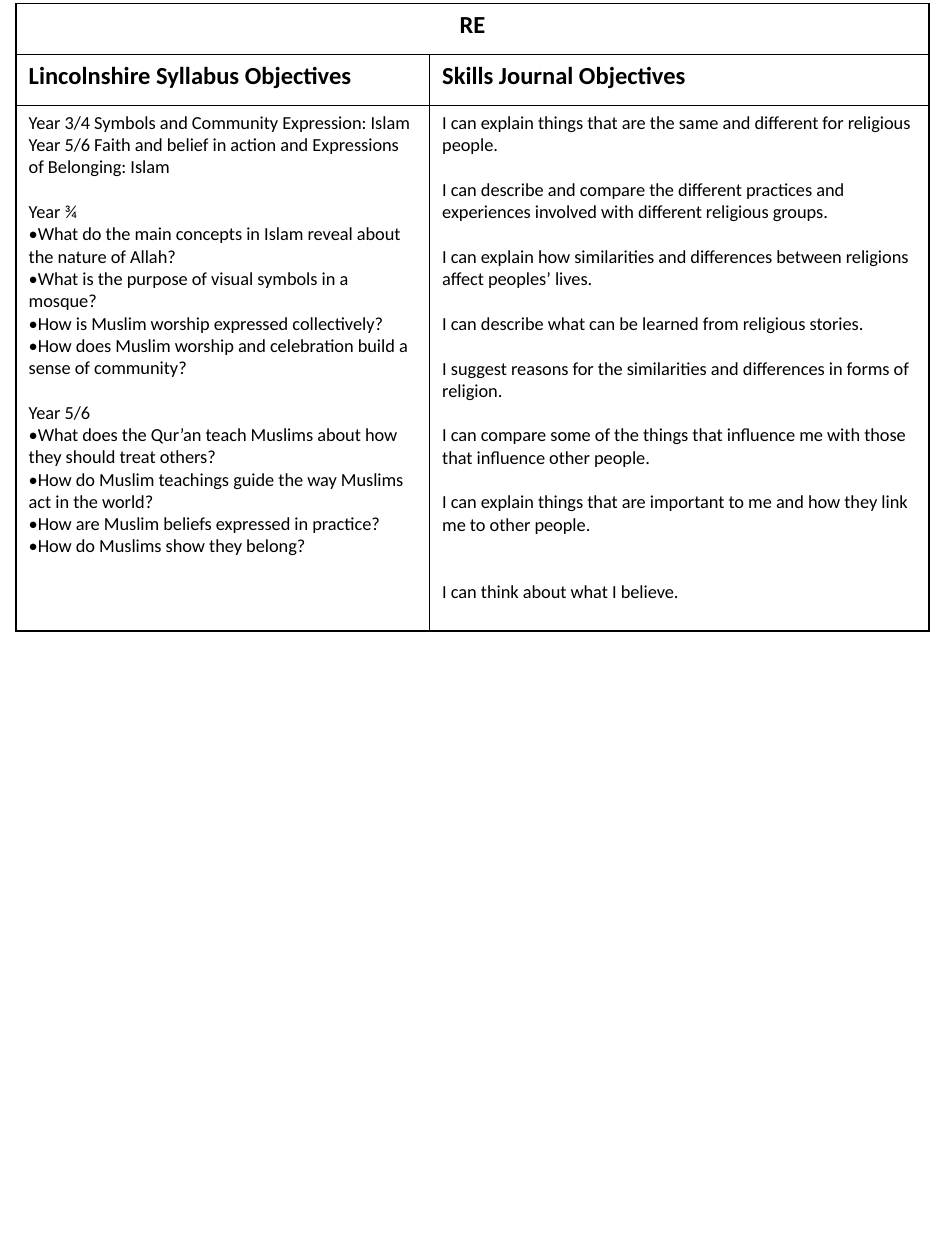
from lxml import etree
from pptx import Presentation
from pptx.dml.color import RGBColor
from pptx.enum.text import PP_ALIGN
from pptx.oxml.ns import qn
from pptx.util import Pt

CENTER = PP_ALIGN.CENTER
LEFT = PP_ALIGN.LEFT
BLACK = RGBColor(0, 0, 0)
FONT = "Calibri"
GAP = 12.8

themes = [
    (0, "Year 3/4 Symbols and Community Expression: Islam"),
    (0, "Year 5/6 Faith and belief in action and Expressions of Belonging: Islam"),
    (1, "Year ¾"),
    (0, "•What do the main concepts in Islam reveal about the nature of Allah? "),
    (0, "•What is the purpose of visual symbols in a mosque?"),
    (0, "•How is Muslim worship expressed collectively?"),
    (0, "•How does Muslim worship and celebration build a sense of community? "),
    (1, "Year 5/6 "),
    (0, "•What does the Qur’an teach Muslims about how they should treat others?"),
    (0, "•How do Muslim teachings guide the way Muslims act in the world? "),
    (0, "•How are Muslim beliefs expressed in practice?"),
    (0, "•How do Muslims show they belong? "),
]
skills = [
    (0, "I can explain things that are the same and different for religious people."),
    (1, "I can describe and compare the different practices and experiences involved with different religious groups."),
    (1, "I can explain how similarities and differences between religions affect peoples’ lives."),
    (1, "I can describe what can be learned from religious stories."),
    (1, "I suggest reasons for the similarities and differences in forms of religion."),
    (1, "I can compare some of the things that influence me with those that influence other people."),
    (1, "I can explain things that are important to me and how they link me to other people."),
    (2, "I can think about what I believe."),
]


def write(cell, lines, size, bold, align=LEFT):
    frame = cell.text_frame
    for i, (gap, text) in enumerate(lines):
        para = frame.paragraphs[0] if i == 0 else frame.add_paragraph()
        para.text = text
        para.alignment = align
        para.space_before = Pt(gap * GAP)
        para.font.name = FONT
        para.font.size = Pt(size)
        para.font.bold = bold
        para.font.color.rgb = BLACK


def border(cell):
    props = cell._tc.get_or_add_tcPr()
    for i, side in enumerate(("lnL", "lnR", "lnT", "lnB")):
        line = etree.Element(qn("a:" + side), w=str(Pt(1)))
        fill = etree.SubElement(line, qn("a:solidFill"))
        etree.SubElement(fill, qn("a:srgbClr"), val=str(BLACK))
        props.insert(i, line)


deck = Presentation()
deck.slide_width = Pt(540)
deck.slide_height = Pt(720)
slide = deck.slides.add_slide(deck.slide_layouts[6])

table = slide.shapes.add_table(3, 2, Pt(9.2), Pt(2), Pt(521.6), Pt(358.6)).table
for col, width in zip(table.columns, (236.3, 285.3)):
    col.width = Pt(width)
for row, height in zip(table.rows, (29.2, 29.2, 300.2)):
    row.height = Pt(height)
for cell in table.iter_cells():
    cell.fill.background()
    border(cell)

table.cell(0, 0).merge(table.cell(0, 1))
write(table.cell(0, 0), [(0, "RE")], 14, True, CENTER)
write(table.cell(1, 0), [(0, "Lincolnshire Syllabus Objectives")], 14, True)
write(table.cell(1, 1), [(0, "Skills Journal Objectives")], 14, True)
write(table.cell(2, 0), themes, 10.5, False)
write(table.cell(2, 1), skills, 10.5, False)

deck.save("out.pptx")
